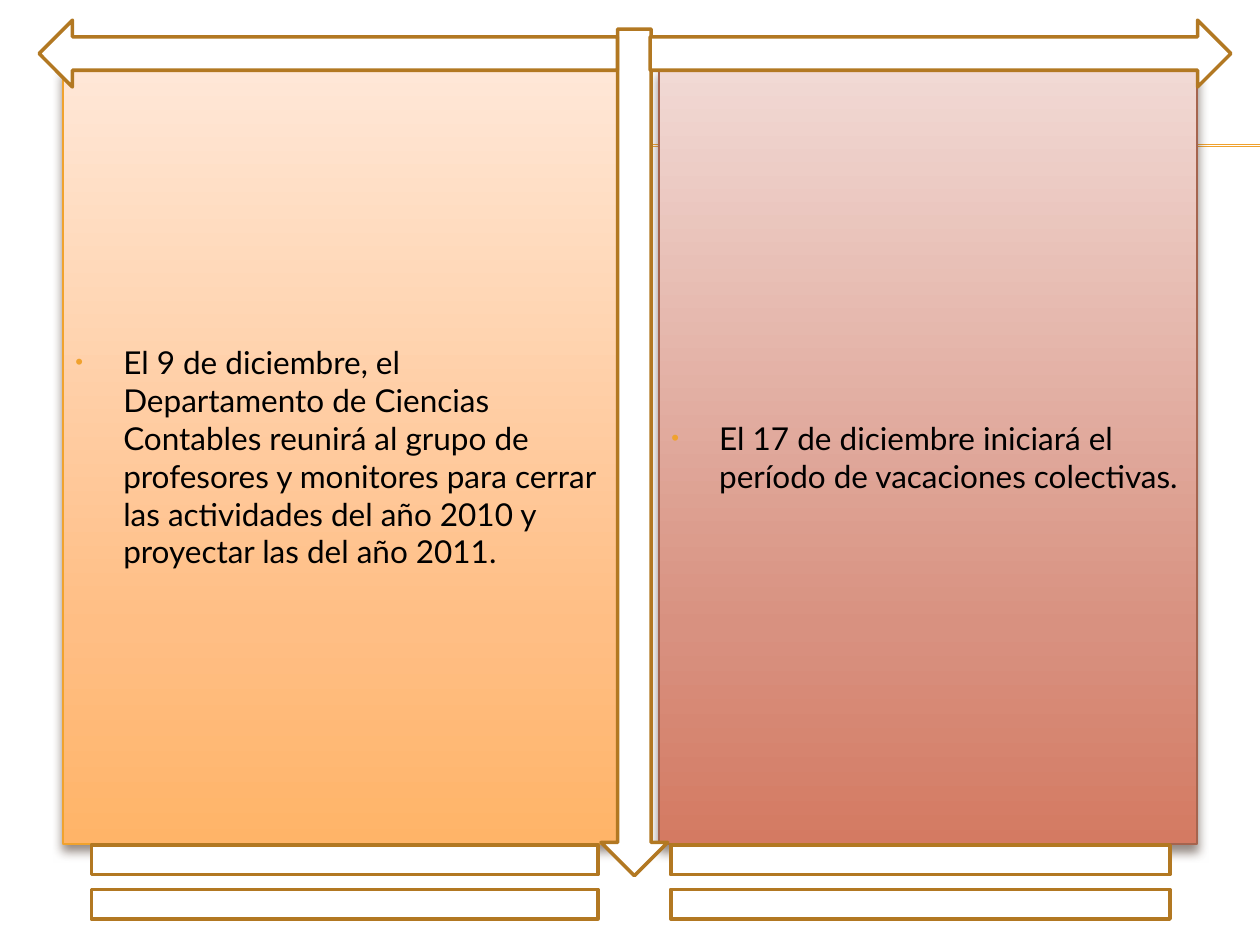
import pptx
import pptx.dml.color
import pptx.enum.shapes
import pptx.enum.text
import pptx.util
import lxml.etree

kinds = pptx.enum.shapes.MSO_SHAPE
pt = pptx.util.Pt
deck = pptx.Presentation()
deck.slide_width = pptx.util.Inches(10)
deck.slide_height = pptx.util.Inches(7.5)
slide = deck.slides.add_slide(deck.slide_layouts[6])


def tint(code):
    return pptx.dml.color.RGBColor.from_string(code)


def share(x, y, w, h):
    """Turn percentages of the slide into lengths."""
    wide, high = deck.slide_width / 100, deck.slide_height / 100
    return [round(n) for n in (x * wide, y * high, w * wide, h * high)]


ns = 'xmlns:a="http://schemas.openxmlformats.org/drawingml/2006/main"'
shade = (f'<a:outerShdw {ns} blurRad="{pt(6)}" dist="{pt(4)}" dir="5400000" '
         'algn="t" rotWithShape="0"><a:srgbClr val="4E3B30">'
         '<a:alpha val="60000"/></a:srgbClr></a:outerShdw>')

# Double rule behind the panels
for y in (15.33, 15.47):
    left, top, width, _ = share(5.6, y, 94.4, 0)
    rule = slide.shapes.add_connector(
        pptx.enum.shapes.MSO_CONNECTOR.STRAIGHT, left, top, left + width, top)
    rule.line.color.rgb = tint("F0A22E")
    rule.line.width = pt(0.75)
    lxml.etree.SubElement(
        rule._element.spPr, pptx.oxml.ns.qn("a:effectLst"))

# Two text panels
panels = [
    (5, 44.2, "F0A22E", ("FFE7D7", "FFBE84", "FFB468"),
     "El 9 de diciembre, el Departamento de Ciencias Contables reunirá al "
     "grupo de profesores y monitores para cerrar las actividades del año "
     "2010 y proyectar las del año 2011."),
    (52.3, 42.7, "A5644E", ("F1D9D4", "D89180", "D47A62"),
     "El 17 de diciembre iniciará el período de vacaciones colectivas."),
]
for x, w, edge, stops, words in panels:
    panel = slide.shapes.add_shape(kinds.RECTANGLE, *share(x, 7.33, w, 82))
    panel.line.color.rgb = tint(edge)
    panel.line.width = pt(0.79)
    panel.fill.gradient()
    props = panel._element.spPr
    grad = props.find(pptx.oxml.ns.qn("a:gradFill"))
    grad.clear()
    marks = "".join(
        f'<a:gs pos="{pos}000"><a:srgbClr val="{code}"/></a:gs>'
        for pos, code in zip((0, 72, 100), stops))
    grad.append(lxml.etree.fromstring(f"<a:gsLst {ns}>{marks}</a:gsLst>"))
    grad.append(lxml.etree.fromstring(
        f'<a:lin {ns} ang="5400000" scaled="0"/>'))
    panel.shadow.inherit = False
    props.find(pptx.oxml.ns.qn("a:effectLst")).append(
        lxml.etree.fromstring(shade))

    frame = panel.text_frame
    frame.word_wrap = True
    frame.vertical_anchor = pptx.enum.text.MSO_ANCHOR.MIDDLE
    frame.text = words
    para = frame.paragraphs[0]
    para.alignment = pptx.enum.text.PP_ALIGN.LEFT
    inner = para._p.get_or_add_pPr()
    dent = pptx.util.Inches(0.38)
    inner.set("marL", str(dent))
    inner.set("indent", str(-dent))
    for part in ('<a:buClr {}><a:srgbClr val="F0A22E"/></a:buClr>',
                 '<a:buSzPct {} val="70000"/>',
                 '<a:buFont {} typeface="Arial"/>',
                 '<a:buChar {} char="•"/>'):
        inner.append(lxml.etree.fromstring(part.format(ns)))
    font = para.runs[0].font
    font.name = "Lato"
    font.size = pt(18)
    font.color.rgb = tint("000000")

# Arrows and equal signs that frame the panels
signs = [
    (kinds.DOWN_ARROW, 47.7, 3.07, 5.3, 89.6),
    (kinds.RIGHT_ARROW, 51.6, 2.13, 46.1, 7.07),
    (kinds.LEFT_ARROW, 3.1, 2.13, 45.9, 7.07),
    (kinds.MATH_EQUAL, 0, 86.67, 54.7, 13.33),
    (kinds.MATH_EQUAL, 46.1, 86.67, 53.9, 13.33),
]
for kind, *box in signs:
    sign = slide.shapes.add_shape(kind, *share(*box))
    sign.shadow.inherit = False
    sign.fill.solid()
    sign.fill.fore_color.rgb = tint("FFFFFF")
    sign.line.color.rgb = tint("B27822")
    sign.line.width = pt(2)

deck.save("out.pptx")
